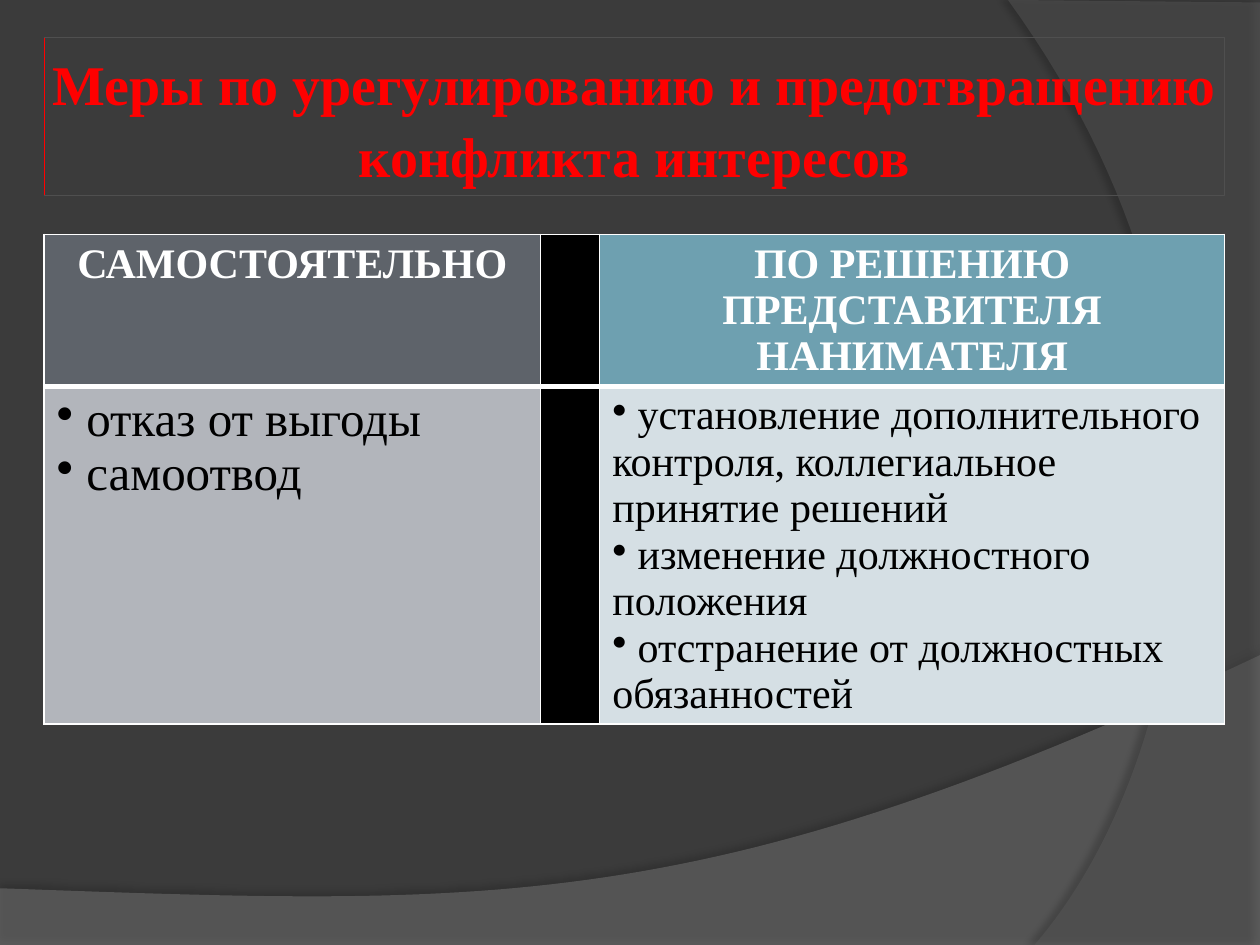
from lxml import etree
from pptx import Presentation, util as u
from pptx.dml.color import RGBColor
from pptx.enum import shapes, text
from pptx.oxml import parse_xml
from pptx.oxml.ns import nsdecls, qn

BACKGROUND = RGBColor(0x3B, 0x3B, 0x3B)
WAVE_GRAY = RGBColor(0x7F, 0x7F, 0x7F)
SIDE_GRAY = RGBColor(0x5E, 0x5E, 0x5E)
FRAME_GRAY = RGBColor(0x4F, 0x4F, 0x4F)
RED = RGBColor(0xFF, 0x00, 0x00)
WHITE = RGBColor(0xFF, 0xFF, 0xFF)
BLACK = RGBColor(0x00, 0x00, 0x00)
SLATE = RGBColor(0x5E, 0x63, 0x6A)
TEAL = RGBColor(0x6E, 0xA0, 0xB0)
PALE_SLATE = RGBColor(0xB2, 0xB5, 0xBB)
PALE_TEAL = RGBColor(0xD5, 0xDF, 0xE4)

FONT = "Times New Roman"
UNIT = u.Inches(0.1)  # the slide is a grid of 100 columns and 75 rows
COLUMNS, ROWS = 100, 75


def grid(*lengths):
    return [u.Emu(round(length * UNIT)) for length in lengths]


def bezier(start, control_1, control_2, end, steps=60):
    """Points along a cubic curve, without its start."""
    def at(t):
        weights = ((1 - t) ** 3, 3 * t * (1 - t) ** 2, 3 * t * t * (1 - t), t ** 3)
        corners = (start, control_1, control_2, end)
        return tuple(sum(w * c[axis] for w, c in zip(weights, corners)) for axis in (0, 1))
    return [at(step / steps) for step in range(1, steps + 1)]


def write(frame, lines, size=24, color=BLACK, bold=False, align=text.PP_ALIGN.LEFT,
          bullet=None, spacing=None):
    for index, line in enumerate(lines):
        paragraph = frame.paragraphs[0] if index == 0 else frame.add_paragraph()
        paragraph.alignment = align
        if spacing:
            paragraph.line_spacing = spacing
        if bullet:
            properties = paragraph._p.get_or_add_pPr()
            etree.SubElement(properties, qn("a:buChar")).set("char", bullet)
        run = paragraph.add_run()
        run.text = line
        run.font.name, run.font.size = FONT, u.Pt(size)
        run.font.bold, run.font.color.rgb = bold, color


def set_border(cell, side, width, color=WHITE):
    cell._tc.get_or_add_tcPr().append(parse_xml(
        f'<a:ln{side} {nsdecls("a")} w="{u.Pt(width)}"><a:solidFill>'
        f'<a:srgbClr val="{color}"/></a:solidFill></a:ln{side}>'))


class SlideBuilder:
    def __init__(self, presentation):
        self.slide = presentation.slides.add_slide(presentation.slide_layouts[6])
        self.slide.background.fill.solid()
        self.slide.background.fill.fore_color.rgb = BACKGROUND

    def backdrop(self, points, color, opacity, shadow_opacity, distance, angle):
        """Translucent outline that casts a soft shadow."""
        corners = [grid(*point) for point in points]
        builder = self.slide.shapes.build_freeform(*corners[0], scale=1.0)
        builder.add_line_segments(corners[1:], close=True)
        shape = builder.convert_to_shape()
        shape.line.fill.background()
        shape.fill.solid()
        shape.fill.fore_color.rgb = color
        fill_color = shape._element.spPr.find(".//" + qn("a:srgbClr"))
        etree.SubElement(fill_color, qn("a:alpha")).set("val", str(opacity * 1000))
        shape._element.spPr.append(parse_xml(
            f'<a:effectLst {nsdecls("a")}><a:outerShdw blurRad="{u.Pt(4)}" '
            f'dist="{u.Pt(distance)}" dir="{angle * 60000}" algn="ctr" rotWithShape="0">'
            f'<a:srgbClr val="{BLACK}"><a:alpha val="{shadow_opacity * 1000}"/></a:srgbClr>'
            f'</a:outerShdw></a:effectLst>'))

    def title(self, wording, left, top, width, height):
        shape = self.slide.shapes.add_shape(
            shapes.MSO_SHAPE.RECTANGLE, *grid(left, top, width, height))
        shape.shadow.inherit = False
        shape.fill.background()
        shape.line.color.rgb, shape.line.width = FRAME_GRAY, u.Pt(0.5)
        frame = shape.text_frame
        frame.word_wrap = True
        frame.vertical_anchor = text.MSO_ANCHOR.MIDDLE
        frame.margin_left = frame.margin_right = u.Inches(0.05)
        frame.margin_top = frame.margin_bottom = u.Inches(0.05)
        write(frame, [wording], size=32, color=RED, bold=True,
              align=text.PP_ALIGN.CENTER, spacing=1.08)

    def line(self, start, end, color, width):
        connector = self.slide.shapes.add_connector(
            shapes.MSO_CONNECTOR.STRAIGHT, *grid(*start, *end))
        connector.line.color.rgb, connector.line.width = color, u.Pt(width)
        etree.SubElement(connector._element.spPr, qn("a:effectLst"))

    def table(self, left, top, widths, heights, cells):
        """Each cell is (fill, lines, text format); the first row is the header."""
        table = self.slide.shapes.add_table(
            len(heights), len(widths),
            *grid(left, top, sum(widths), sum(heights))).table
        for column, width in zip(table.columns, grid(*widths)):
            column.width = width
        for row, height in zip(table.rows, grid(*heights)):
            row.height = height
        for row_index, row in enumerate(cells):
            for column_index, (fill, lines, style) in enumerate(row):
                cell = table.cell(row_index, column_index)
                for side in "LRTB":
                    under_header = (row_index, side) in ((0, "B"), (1, "T"))
                    set_border(cell, side, 3 if under_header else 1)
                cell.fill.solid()
                cell.fill.fore_color.rgb = fill
                write(cell.text_frame, lines, **style)


def main():
    presentation = Presentation()
    presentation.slide_width, presentation.slide_height = grid(COLUMNS, ROWS)
    builder = SlideBuilder(presentation)

    wave_start, side_start = (COLUMNS, 52), (82.1, ROWS)
    wave = [(0, 70.5), (0, ROWS), (COLUMNS, ROWS), wave_start,
            *bezier(wave_start, (55.9, 72.9), (39.1, 71.9), (0, 70.5))]
    side = [(COLUMNS, 0.2), (COLUMNS, ROWS), side_start,
            *bezier(side_start, (93.5, 61.9), (101.8, 30), (80, 0))]
    builder.backdrop(wave, WAVE_GRAY, 45, 35, distance=3.5, angle=270)
    builder.backdrop(side, SIDE_GRAY, 40, 45, distance=4, angle=180)

    left, title_top, title_height = 3.5, 3, 12.5
    builder.title("Меры по урегулированию и предотвращению конфликта интересов",
                  left, title_top, 93.7, title_height)
    builder.line((left, title_top), (left, title_top + title_height), RED, 0.5)

    header = dict(color=WHITE, bold=True, align=text.PP_ALIGN.CENTER)
    divider = (BLACK, [], {})
    builder.table(left, 18.6, widths=[39.4, 4.7, 49.6], heights=[12, 26.8], cells=[
        [(SLATE, ["САМОСТОЯТЕЛЬНО"], header),
         divider,
         (TEAL, ["ПО РЕШЕНИЮ ПРЕДСТАВИТЕЛЯ НАНИМАТЕЛЯ"], header)],
        [(PALE_SLATE, [" отказ от выгоды", " самоотвод"], dict(size=28, bullet="•")),
         divider,
         (PALE_TEAL, [
             " установление дополнительного контроля, коллегиальное принятие решений",
             " изменение должностного положения",
             " отстранение от должностных обязанностей"], dict(bullet="•"))],
    ])
    presentation.save("out.pptx")


if __name__ == "__main__":
    main()
